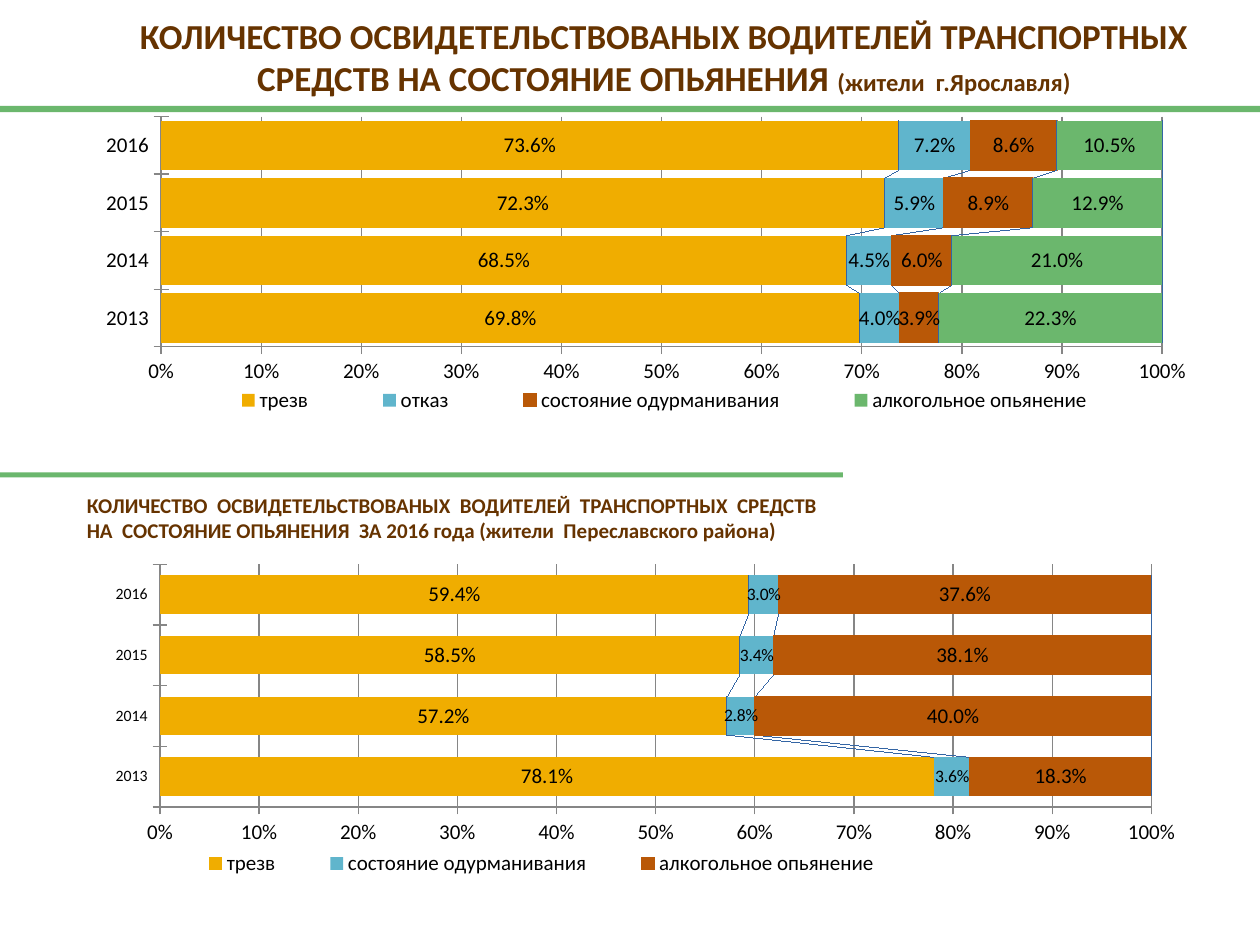
from lxml import etree
from pptx import Presentation
from pptx.chart.data import CategoryChartData
from pptx.dml.color import RGBColor
from pptx.enum.chart import XL_CHART_TYPE, XL_LABEL_POSITION, XL_LEGEND_POSITION, XL_TICK_MARK
from pptx.enum.shapes import MSO_SHAPE
from pptx.enum.text import MSO_ANCHOR, PP_ALIGN
from pptx.oxml import parse_xml
from pptx.util import Inches, Pt

STACKED_BARS = XL_CHART_TYPE.BAR_STACKED_100
LABEL_CENTER = XL_LABEL_POSITION.CENTER
LEGEND_BOTTOM = XL_LEGEND_POSITION.BOTTOM
TICK_CROSS = XL_TICK_MARK.CROSS
RECTANGLE = MSO_SHAPE.RECTANGLE
MIDDLE = MSO_ANCHOR.MIDDLE
CENTER, LEFT = PP_ALIGN.CENTER, PP_ALIGN.LEFT

BROWN = RGBColor(0x66, 0x33, 0x00)
BLACK = RGBColor(0x00, 0x00, 0x00)
GRAY = RGBColor(0x86, 0x86, 0x86)
YELLOW = RGBColor(0xF0, 0xAD, 0x00)
BLUE = RGBColor(0x60, 0xB5, 0xCC)
RUST = RGBColor(0xB9, 0x58, 0x07)
GREEN = RGBColor(0x6B, 0xB7, 0x6D)
LINK_BLUE = RGBColor(0x3A, 0x67, 0x9C)
SERIES_COLORS = (YELLOW, BLUE, RUST, GREEN)

FONT = "Calibri"
CHART_NS = "http://schemas.openxmlformats.org/drawingml/2006/chart"
DRAWING_NS = "http://schemas.openxmlformats.org/drawingml/2006/main"
YEARS = ("2013", "2014", "2015", "2016")
PLOT_LAYOUT = {"x": 0.099, "y": 0.089, "w": 0.847, "h": 0.662}

CITY_SERIES = {
    "трезв": (0.698, 0.685, 0.723, 0.736),
    "отказ": (0.04, 0.045, 0.059, 0.072),
    "состояние одурманивания": (0.039, 0.06, 0.089, 0.086),
    "алкогольное опьянение": (0.223, 0.21, 0.129, 0.105),
}
DISTRICT_SERIES = {
    "трезв": (0.781, 0.572, 0.585, 0.594),
    "состояние одурманивания": (0.036, 0.028, 0.034, 0.03),
    "алкогольное опьянение": (0.183, 0.4, 0.381, 0.376),
}


def manual_layout(box, inner=False):
    layout = etree.Element(f"{{{CHART_NS}}}layout")
    manual = etree.SubElement(layout, f"{{{CHART_NS}}}manualLayout")
    settings = {"layoutTarget": "inner"} if inner else {}
    settings.update({"xMode": "edge", "yMode": "edge"}, **box)
    for name, value in settings.items():
        etree.SubElement(manual, f"{{{CHART_NS}}}{name}", val=str(value))
    return parse_xml(etree.tostring(layout))


class SlideBuilder:
    def __init__(self, deck):
        self.slide = deck.slides.add_slide(deck.slide_layouts[6])

    def text(self, left, top, width, height, paragraphs, size, align):
        box = self.slide.shapes.add_textbox(
            Inches(left), Inches(top), Inches(width), Inches(height))
        frame = box.text_frame
        frame.word_wrap = True
        frame.vertical_anchor = MIDDLE
        for index, content in enumerate(paragraphs):
            para = frame.add_paragraph() if index else frame.paragraphs[0]
            para.text = content
            para.alignment = align
            para.font.name = FONT
            para.font.size = Pt(size)
            para.font.bold = True
            para.font.color.rgb = BROWN
        return frame

    def stripe(self, top, width, height):
        shape = self.slide.shapes.add_shape(
            RECTANGLE, Inches(0), Inches(top), Inches(width), Inches(height))
        shape.shadow.inherit = False
        shape.fill.solid()
        shape.fill.fore_color.rgb = GREEN
        shape.line.fill.background()

    def chart(self, left, top, width, height, series_values, gap, overlap,
              legend_box, category_size=12, label_sizes=None):
        data = CategoryChartData(number_format="0.0%")
        data.categories = YEARS
        for name, values in series_values.items():
            data.add_series(name, values)
        chart = self.slide.shapes.add_chart(
            STACKED_BARS, Inches(left), Inches(top), Inches(width), Inches(height), data).chart
        chart.has_title = False
        chart.font.name = FONT
        chart.font.size = Pt(12)
        chart.font.color.rgb = BLACK

        plot = chart.plots[0]
        plot.vary_by_categories = False
        plot.gap_width = gap
        plot.overlap = overlap
        for index, series in enumerate(plot.series):
            color = SERIES_COLORS[index]
            series.invert_if_negative = False
            series.format.fill.solid()
            series.format.fill.fore_color.rgb = color
            if color == RUST:
                series.format.line.color.rgb = RUST
                series.format.line.width = Pt(0.75)
            labels = series.data_labels
            labels.show_value = True
            labels.position = LABEL_CENTER
            labels.number_format = "0.0%"
            labels.number_format_is_linked = False
            labels.font.size = Pt(label_sizes[index] if label_sizes else 12)

        for axis in (chart.category_axis, chart.value_axis):
            axis.major_tick_mark = TICK_CROSS
            axis.format.line.color.rgb = GRAY
        chart.category_axis.tick_labels.font.size = Pt(category_size)
        value_axis = chart.value_axis
        value_axis.minimum_scale, value_axis.maximum_scale, value_axis.major_unit = 0, 1, 0.1
        value_axis.has_major_gridlines = True
        value_axis.major_gridlines.format.line.color.rgb = GRAY
        value_axis.tick_labels.number_format = "0%"
        value_axis.tick_labels.number_format_is_linked = False

        chart.has_legend = True
        chart.legend.position = LEGEND_BOTTOM
        chart.legend.include_in_layout = False
        self.arrange(chart, legend_box)

    def arrange(self, chart, legend_box):
        root = chart.element
        for layout in root.xpath(".//c:plotArea/c:layout | .//c:legend/c:layout"):
            layout.getparent().remove(layout)
        root.xpath(".//c:plotArea")[0].insert(0, manual_layout(PLOT_LAYOUT, inner=True))
        root.xpath(".//c:legendPos")[0].addnext(manual_layout(legend_box))
        root.xpath(".//c:barChart/c:overlap")[0].addnext(parse_xml(
            f'<c:serLines xmlns:c="{CHART_NS}" xmlns:a="{DRAWING_NS}"><c:spPr>'
            f'<a:ln w="9525"><a:solidFill><a:srgbClr val="{LINK_BLUE}"/></a:solidFill></a:ln>'
            '</c:spPr></c:serLines>'))


def main():
    deck = Presentation()
    deck.slide_width, deck.slide_height = Inches(10), Inches(7.5)
    page = SlideBuilder(deck)

    title = page.text(
        0.98, 0.05, 8.58, 0.79,
        ["КОЛИЧЕСТВО ОСВИДЕТЕЛЬСТВОВАНЫХ ВОДИТЕЛЕЙ ТРАНСПОРТНЫХ СРЕДСТВ НА СОСТОЯНИЕ ОПЬЯНЕНИЯ "],
        20, CENTER)
    span = title.paragraphs[0].add_run()
    span.text = "(жители  г.Ярославля)"
    span.font.size = Pt(14)
    page.chart(0.35, 0.68, 9.38, 2.76, CITY_SERIES, 16, 76,
               {"x": 0.11, "y": 0.86, "w": 0.83, "h": 0.09})
    page.stripe(0.84, 10, 0.05)

    page.chart(0.35, 4.22, 9.29, 2.91, DISTRICT_SERIES, 58, 100,
               {"x": 0.1, "y": 0.86, "w": 0.65, "h": 0.09},
               category_size=9, label_sizes=(12, 10, 12))
    page.text(
        0.59, 3.83, 8.58, 0.55,
        ["КОЛИЧЕСТВО  ОСВИДЕТЕЛЬСТВОВАНЫХ  ВОДИТЕЛЕЙ  ТРАНСПОРТНЫХ  СРЕДСТВ",
         "НА  СОСТОЯНИЕ ОПЬЯНЕНИЯ  ЗА 2016 года (жители  Переславского района)"],
        12, LEFT)
    page.stripe(3.75, 6.69, 0.04)
    deck.save("out.pptx")


if __name__ == "__main__":
    main()
